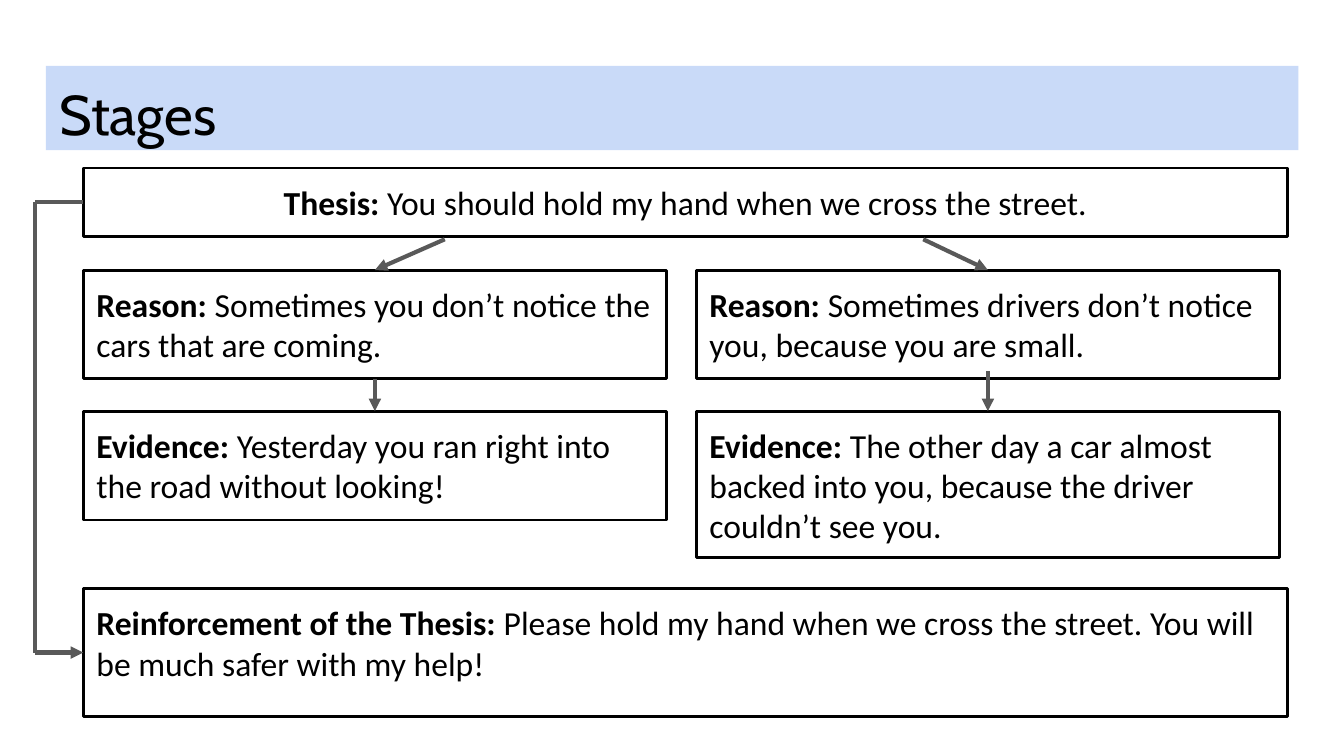
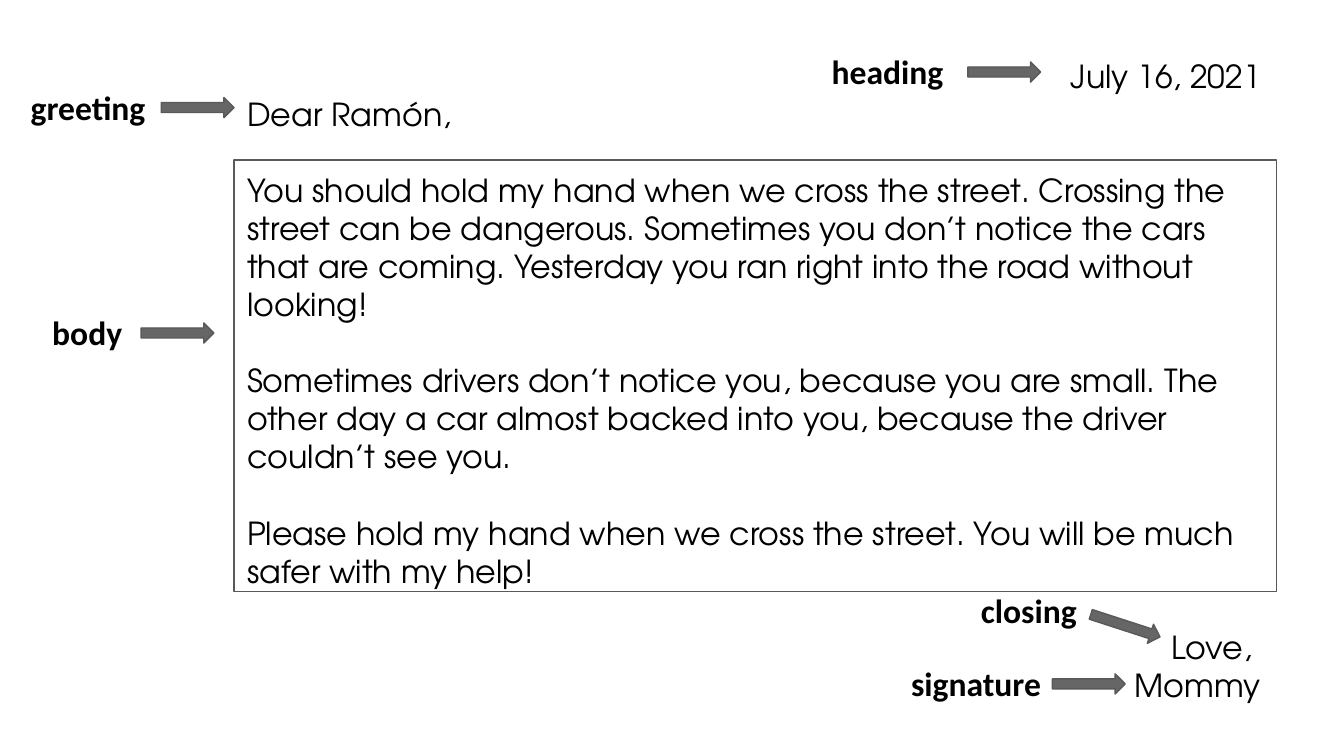
from pptx import Presentation
from pptx.dml.color import RGBColor
from pptx.enum.shapes import MSO_CONNECTOR, MSO_SHAPE
from pptx.enum.text import MSO_ANCHOR, PP_ALIGN
from pptx.oxml.ns import qn
from pptx.util import Pt
from lxml.etree import SubElement

COLORS = {"band": "C9DAF8", "ink": "000000", "line": "595959", "arrow": "666666"}
TITLE_FONT, LABEL_FONT, LETTER_FONT = "Cabin", "Calibri", "TeX Gyre Adventor"
INSET = 7.2
TOP, LEFT, BOTTOM = 0, 1, 2


def rgb(name):
    return RGBColor.from_string(COLORS[name])


def set_font(p, name, size, bold=None):
    p.font.name, p.font.size, p.font.bold = name, Pt(size), bold
    p.font.color.rgb = rgb("ink")


def prepare_frame(sp):
    tf = sp.text_frame
    tf.word_wrap = True
    tf.vertical_anchor = MSO_ANCHOR.TOP
    tf.margin_left = tf.margin_right = tf.margin_top = tf.margin_bottom = Pt(INSET)
    tf.paragraphs[0].alignment = PP_ALIGN.LEFT
    return tf


def add_box(s, kind, box, fill=None, line=None, width=0.75):
    sp = s.shapes.add_shape(kind, *map(Pt, box))
    sp.shadow.inherit = False
    if fill:
        sp.fill.solid()
        sp.fill.fore_color.rgb = rgb(fill)
    else:
        sp.fill.background()
    if line:
        sp.line.color.rgb = rgb(line)
        sp.line.width = Pt(width)
    else:
        sp.line.fill.background()
    return sp


def add_title(s, box, text):
    sp = add_box(s, MSO_SHAPE.RECTANGLE, box, fill="band")
    p = prepare_frame(sp).paragraphs[0]
    p.text = text
    set_font(p, TITLE_FONT, 30)


def add_stage(s, box, name, text, align=PP_ALIGN.LEFT):
    sp = add_box(s, MSO_SHAPE.RECTANGLE, box, line="ink", width=1.5)
    p = prepare_frame(sp).paragraphs[0]
    p.alignment = align
    for part, bold in ((name + ": ", True), (text, False)):
        r = p.add_run()
        r.text = part
        r.font.bold = bold
    set_font(p, LABEL_FONT, 18)
    return sp


def add_line(s, start, end, head=True, source=None, target=None):
    """Draw a line; source and target are optional (shape, side) joints."""
    c = s.shapes.add_connector(MSO_CONNECTOR.STRAIGHT, *map(Pt, (*start, *end)))
    if source:
        c.begin_connect(*source)
    if target:
        c.end_connect(*target)
    c.line.color.rgb = rgb("line")
    c.line.width = Pt(2.25)
    if head:
        SubElement(c.line._get_or_add_ln(), qn("a:tailEnd"), type="triangle")
    SubElement(c._element.spPr, qn("a:effectLst"))


def stages_diagram(s, box):
    x, y, w, h = box
    col_w, col_step, reason_h, close_h = 312.5, 328.4, 58.3, 68.4
    reason_y, evidence_y, close_y = y + 54.7, y + 130.3, y + h - close_h
    thesis_h = 36.7

    thesis = add_stage(s, (x, y, w, thesis_h), "Thesis",
                       "You should hold my hand when we cross the street.", PP_ALIGN.CENTER)
    columns = [
        ("Sometimes you don’t notice the cars that are coming.",
         "Yesterday you ran right into the road without looking!", 58.3, 193.7, 0),
        ("Sometimes drivers don’t notice you, because you are small.",
         "The other day a car almost backed into you, because the driver couldn’t see you.",
         78.5, 450, 4.2),
    ]
    for i, (reason_text, evidence_text, evidence_h, arrow_x, overlap) in enumerate(columns):
        left = x + i * col_step
        mid = left + col_w / 2
        reason = add_stage(s, (left, reason_y, col_w, reason_h), "Reason", reason_text)
        evidence = add_stage(s, (left, evidence_y, col_w, evidence_h), "Evidence", evidence_text)
        add_line(s, (x + arrow_x, y + thesis_h + 1.5), (mid, reason_y), target=(reason, TOP))
        add_line(s, (mid, reason_y + reason_h - overlap), (mid, evidence_y),
                 source=None if overlap else (reason, BOTTOM), target=(evidence, TOP))

    closing = add_stage(s, (x, close_y, w, close_h), "Reinforcement of the Thesis",
                        "Please hold my hand when we cross the street. "
                        "You will be much safer with my help!")
    rail, rail_top, rail_end = x - 26, y + thesis_h / 2, close_y + close_h / 2
    add_line(s, (x, rail_top), (rail, rail_top), head=False, source=(thesis, LEFT))
    add_line(s, (rail, rail_top), (rail, rail_end), head=False)
    add_line(s, (rail, rail_end), (x, rail_end), target=(closing, LEFT))


def letter_text(s, box):
    size, blank_line = 17, 20.4
    lines = [
        ("July 16, 2021", PP_ALIGN.RIGHT, 0),
        ("Dear Ramón,", PP_ALIGN.LEFT, 0),
        ("You should hold my hand when we cross the street. Crossing the street can be "
         "dangerous. Sometimes you don’t notice the cars that are coming. Yesterday you "
         "ran right into the road without looking!", PP_ALIGN.LEFT, blank_line),
        ("Sometimes drivers don’t notice you, because you are small. The other day a car "
         "almost backed into you, because the driver couldn’t see you.",
         PP_ALIGN.LEFT, blank_line),
        ("Please hold my hand when we cross the street. You will be much safer with my help!",
         PP_ALIGN.LEFT, blank_line),
        ("Love, ", PP_ALIGN.RIGHT, blank_line),
        ("Mommy", PP_ALIGN.RIGHT, 0),
    ]
    tf = prepare_frame(s.shapes.add_textbox(*map(Pt, box)))
    for i, (text, align, before) in enumerate(lines):
        p = tf.add_paragraph() if i else tf.paragraphs[0]
        p.text, p.alignment = text, align
        if before:
            p.space_before = Pt(before)
        set_font(p, LETTER_FONT, size)


def part_label(s, box, text, arrow_dx, arrow_dy=13, turn=0):
    """Name a part of the letter and point an arrow at it."""
    x, y = box[:2]
    p = prepare_frame(s.shapes.add_textbox(*map(Pt, box))).paragraphs[0]
    p.text = text
    set_font(p, LABEL_FONT, 18, True)
    arrow = add_box(s, MSO_SHAPE.RIGHT_ARROW, (x + arrow_dx, y + arrow_dy, 39, 10.8),
                    fill="arrow", line="line")
    arrow.rotation = turn


def stages_slide(s):
    add_title(s, (24.6, 35.3, 671, 45.2), "Stages")
    stages_diagram(s, (44.6, 90, 645.3, 293.8))


def letter_slide(s):
    letter_text(s, (125.3, 23, 557.3, 358.6))
    label_h = 37.4
    part_label(s, (438.5, 20.2, 75.6, label_h), "heading", 80)
    part_label(s, (9.4, 39.2, 105, label_h), "greeting", 77)
    part_label(s, (20.9, 160, 65.5, label_h), "body", 54.7)
    part_label(s, (518.4, 309, 75.6, label_h), "closing", 65, 20.8, 18)
    part_label(s, (481, 348, 105, label_h), "signature", 82.8)
    add_box(s, MSO_SHAPE.RECTANGLE, (125.3, 85.7, 558.7, 231.1), line="line")


def main():
    prs = Presentation()
    prs.slide_width, prs.slide_height = Pt(720), Pt(405)
    for build in (stages_slide, letter_slide):
        build(prs.slides.add_slide(prs.slide_layouts[6]))
    prs.save("out.pptx")


if __name__ == "__main__":
    main()
